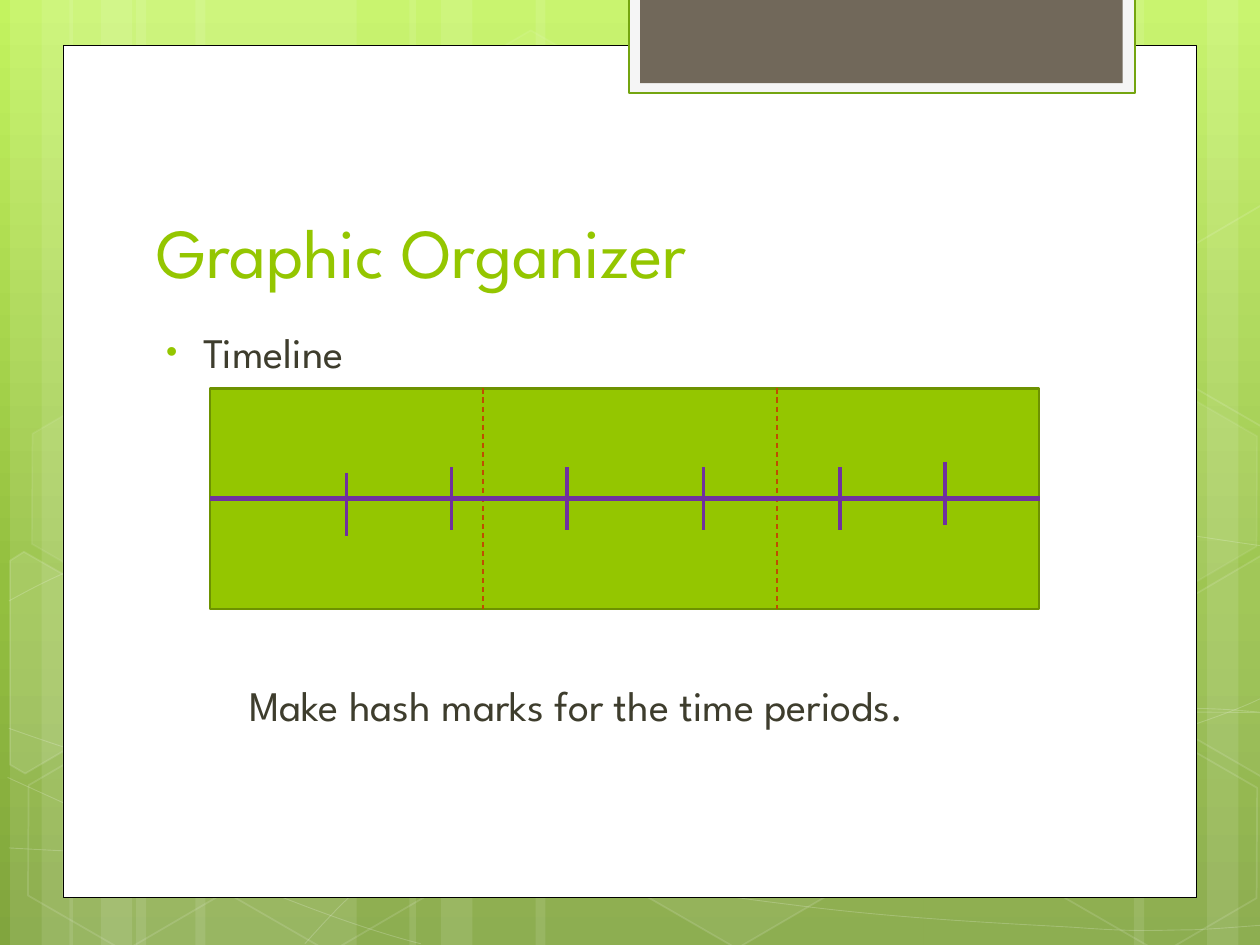
"""Build the Graphic Organizer timeline slide."""
from copy import deepcopy
from lxml.etree import SubElement
from pptx import Presentation
from pptx.dml.color import RGBColor
from pptx.enum.dml import MSO_LINE
from pptx.enum.shapes import MSO_CONNECTOR, MSO_SHAPE
from pptx.enum.text import MSO_ANCHOR
from pptx.oxml.ns import qn
from pptx.util import Inches, Pt

C = {"white": "FFFFFF", "black": "000000", "frame": "F5F5F5", "frame_line": "74A510",
     "tab": "71685A", "green": "94C600", "green_line": "6D9200", "divider": "BF4D00",
     "purple": "7030A0", "text": "3E3D2D", "bg_top": "C3F35F", "bg_mid": "93BF3F",
     "bg_low": "81A53E"}


def paint(fill, color, alpha=100):
    fill.solid()
    fill.fore_color.rgb = RGBColor.from_string(C[color])
    if alpha < 100:
        clr = fill._xPr.find(".//" + qn("a:srgbClr"))
        SubElement(clr, qn("a:alpha"), val=str(alpha * 1000))


def style(sp, fill=None, fill_alpha=100, line=None, width=1, line_alpha=100):
    sp.shadow.inherit = False
    if fill:
        paint(sp.fill, fill, fill_alpha)
    else:
        sp.fill.background()
    if line:
        paint(sp.line.fill, line, line_alpha)
        sp.line.width = Pt(width)
    else:
        sp.line.fill.background()


prs = Presentation()
prs.slide_width, prs.slide_height = Inches(10), Inches(7.5)
s = prs.slides.add_slide(prs.slide_layouts[6])

bg = s.background.fill
bg.gradient()
bg.gradient_angle = 270
first = s.element.find(".//" + qn("a:gs"))
first.addnext(deepcopy(first))
for stop, (pos, color) in zip(bg.gradient_stops, [(0, "bg_top"), (0.62, "bg_mid"), (1, "bg_low")]):
    stop.position = pos
    stop.color.rgb = RGBColor.from_string(C[color])

stripes = [(1.08, 1.75), (0.08, 0.5), (0.33, 0.83), (1.55, 1.75), (0.55, 0.5), (0.8, 0.83),
           (7.33, 1.75), (9.58, 0.5), (9, 0.83), (4.25, 3.08), (3.25, 0.5), (3.5, 0.83)]
for x, w in stripes:
    sp = s.shapes.add_shape(MSO_SHAPE.RECTANGLE, Inches(x), 0, Inches(w), prs.slide_height)
    style(sp, "white", 10)

curves = [
    [(0.07, 6.73), (0.61, 6.76), (1.15, 6.79), (1.9, 6.78), (2.65, 6.77), (3.58, 6.75),
     (4.58, 6.65), (5.58, 6.55), (7, 6.36), (7.92, 6.17), (8.83, 5.98), (9.77, 5.68), (10.07, 5.51)],
    [(0.07, 4.77), (0.36, 4.61), (0.65, 4.46), (1.21, 4.31), (1.78, 4.16), (2.59, 3.94),
     (3.47, 3.87), (4.36, 3.8), (5.44, 3.79), (6.54, 3.87), (7.64, 3.95), (9.47, 4.26), (10.07, 4.34)],
    [(0.06, 6.17), (1.27, 6.72), (2.47, 7.27), (3.34, 7.49)],
    [(0.07, 5.78), (0.38, 5.89), (0.7, 6), (1.28, 6.16), (1.86, 6.31), (2.73, 6.56),
     (3.57, 6.73), (4.4, 6.9), (5.45, 7.08), (6.28, 7.18), (7.11, 7.29), (8, 7.33),
     (8.53, 7.36), (9.05, 7.4), (9.19, 7.38), (9.45, 7.38), (9.71, 7.37), (9.89, 7.35), (10.07, 7.34)],
    [(2.42, 7.49), (2.6, 7.29), (2.78, 7.09), (3.02, 6.91), (3.26, 6.73), (3.6, 6.53),
     (3.88, 6.39), (4.16, 6.25), (4.33, 6.19), (4.7, 6.09), (5.06, 5.99), (5.73, 5.85),
     (6.08, 5.78), (6.44, 5.71), (6.49, 5.71), (6.8, 5.69), (7.11, 5.66), (7.6, 5.63),
     (7.94, 5.62), (8.29, 5.61), (8.86, 5.62), (8.86, 5.62), (9.1, 5.62), (9.3, 5.62),
     (9.53, 5.62), (9.71, 5.63), (9.88, 5.64), (9.97, 5.65), (10.06, 5.66), (10.03, 5.65),
     (10.06, 5.66)],
]
curves[-1].remove((8.86, 5.62))
for curve in curves:
    points = [(Inches(x), Inches(y)) for x, y in curve]
    fb = s.shapes.build_freeform(*points[0])
    fb.add_line_segments(points[1:], close=False)
    sp = fb.convert_to_shape()
    style(sp, line="white", width=0.5, line_alpha=20)
    segments = sp._element.findall(".//" + qn("a:lnTo"))
    outline = segments[0].getparent()
    for i in range(0, len(segments), 3):
        bezier = SubElement(outline, qn("a:cubicBezTo"))
        for segment in segments[i:i + 3]:
            bezier.append(segment[0])
            outline.remove(segment)

hexagons = [(3.34, 0.36, 4, 8), (4.97, 5.89, 6, 12), (0.11, 5.91, 0, 12), (0.14, 3.12, 7, 8),
            (1.74, 5.92, 0, 12), (7.53, 4.53, 10, 12), (8.34, 5.93, 0, 12), (8.34, 3.14, 7, 8)]
for x, y, alpha, line_alpha in hexagons:
    sp = s.shapes.add_shape(MSO_SHAPE.HEXAGON, Inches(x), Inches(y), Inches(1.75), Inches(1.52))
    sp.adjustments[0] = 0.285
    sp.rotation = 30
    style(sp, "white" if alpha else None, alpha, "white", 1, line_alpha)

cut_hexagons = [
    ([(0.08, 4.45), (0.19, 4.38), (0.96, 4.82), (0.95, 5.7), (0.2, 6.14), (0.08, 6.07)], 10),
    ([(9.26, 4.85), (10.01, 4.41), (10.09, 4.46), (10.09, 6.13), (10.02, 6.17), (9.26, 5.73)], 4),
    ([(9.26, 2.07), (10.01, 1.63), (10.1, 1.68), (10.09, 3.35), (10.02, 3.39), (9.26, 2.95)], 0)]
for corners, alpha in cut_hexagons:
    points = [(Inches(x), Inches(y)) for x, y in corners]
    fb = s.shapes.build_freeform(*points[0])
    fb.add_line_segments(points[1:], close=True)
    style(fb.convert_to_shape(), "white" if alpha else None, alpha, "white", 1, 12)

unit = 1 / 12
panels = [((0.5, 0.36, 9, 6.76), {"fill": "white", "line": "black", "width": 0.5}),
          ((4.99, -0.02, 4.02, 0.76), {"fill": "frame", "line": "frame_line", "width": 1.25}),
          ((5.08, -0.02, 3.83, 0.68), {"fill": "tab"}),
          ((20 * unit, 37 * unit, 79 * unit, 21 * unit),
           {"fill": "green", "line": "green_line", "width": 1.25})]
for box, look in panels:
    style(s.shapes.add_shape(MSO_SHAPE.RECTANGLE, *map(Inches, box)), **look)

texts = [((1.14, 1.12, 7.68, 1.25), MSO_ANCHOR.BOTTOM, 40, "green",
          [("Graphic Organizer", 0, 0, 0)]),
         ((1.14, 2.54, 7.41, 3.84), MSO_ANCHOR.TOP, 24, "text",
          [("Timeline", 4.8, 0.38, -0.3),
           ("Make hash marks for the time periods.", 173, 0.74, 0)])]
for box, anchor, size, color, lines in texts:
    tf = s.shapes.add_textbox(*map(Inches, box)).text_frame
    tf.word_wrap = True
    tf.vertical_anchor = anchor
    for i, (text, before, margin, indent) in enumerate(lines):
        p = tf.add_paragraph() if i else tf.paragraphs[0]
        p.space_before = Pt(before)
        r = p.add_run()
        r.text = text
        for key, value in {"name": "League Spartan", "size": Pt(size)}.items():
            setattr(r.font, key, value)
        r.font.color.rgb = RGBColor.from_string(C[color])
        pPr = p._p.get_or_add_pPr()
        pPr.set("marL", str(Inches(margin)))
        pPr.set("indent", str(Inches(indent)))
        if indent:
            SubElement(SubElement(pPr, qn("a:buClr")), qn("a:srgbClr"), val=C["green"])
            SubElement(pPr, qn("a:buSzPct"), val="76000")
            SubElement(pPr, qn("a:buFont"), typeface="Arial")
            SubElement(pPr, qn("a:buChar"), char="•")

dividers = [(x, 37, x, 58, "divider", 0.75) for x in (46, 74)]
axis = [(20, 47.5, 99, 47.5, "purple", 3)]
marks = [(33, 45), (43, 44.5), (54, 44.5), (67, 44.5), (80, 44.5), (90, 44)]
hashes = [(x, y, x, y + 6, "purple", 2.25) for x, y in marks]
for *ends, color, width in dividers + axis + hashes:
    ln = s.shapes.add_connector(MSO_CONNECTOR.STRAIGHT, *[Inches(v * unit) for v in ends])
    paint(ln.line.fill, color)
    ln.line.width = Pt(width)
    if color == "divider":
        ln.line.dash_style = MSO_LINE.DASH
    SubElement(ln._element.spPr, qn("a:effectLst"))

prs.save("out.pptx")
